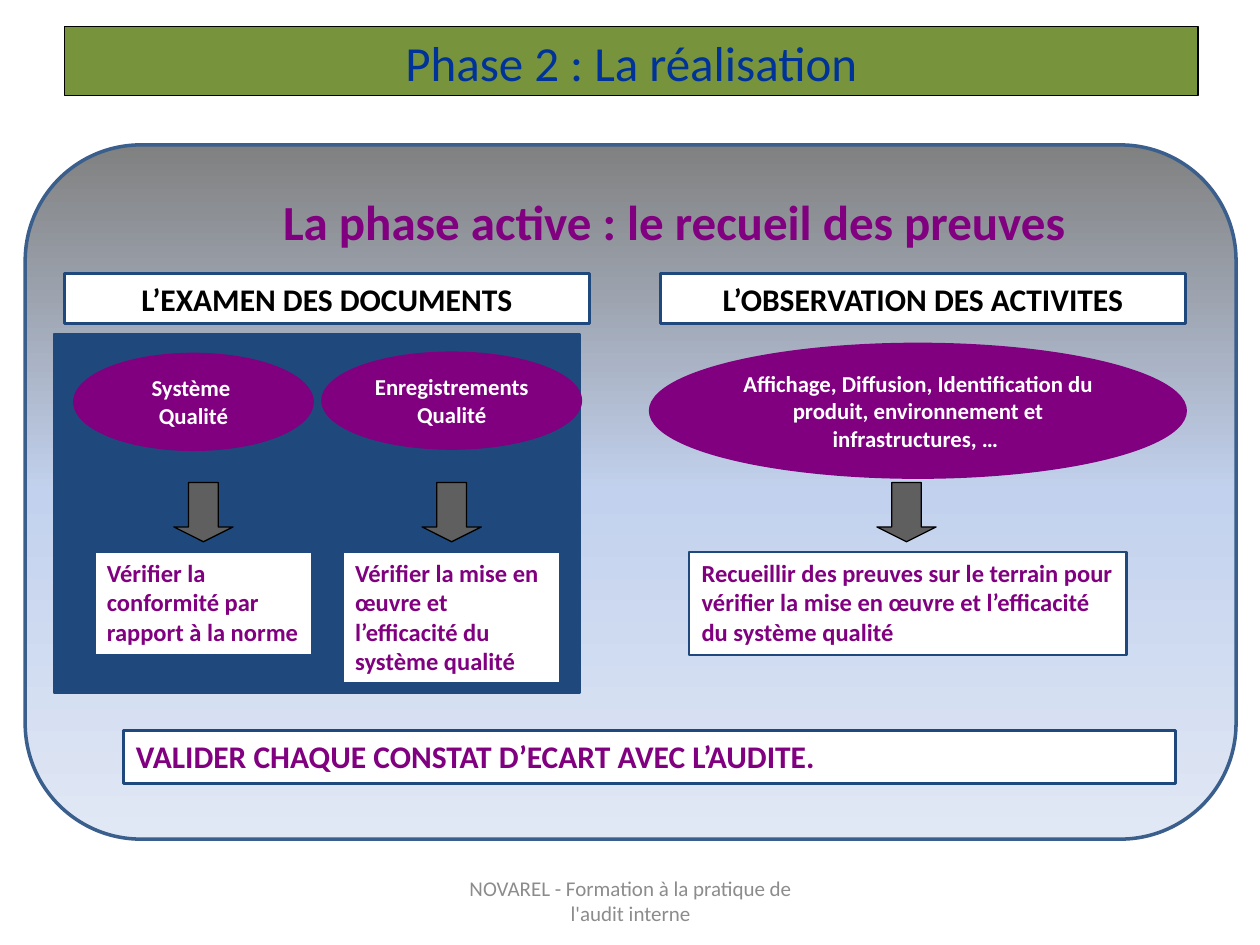
"""Build the audit slide on the evidence-gathering phase."""
from copy import deepcopy

from pptx import Presentation, util as u
from pptx.dml.color import RGBColor
from pptx.enum import shapes, text

PX = 9144
NAVY, PURPLE, WHITE, BLACK = "1F497D", "800080", "FFFFFF", "000000"
KIND = shapes.MSO_SHAPE
AL = text.PP_ALIGN
MID = text.MSO_ANCHOR.MIDDLE
GROW = text.MSO_AUTO_SIZE.SHAPE_TO_FIT_TEXT


def rgb(value):
    return RGBColor.from_string(value)


def add(box, lines=(), kind=KIND.RECTANGLE, fill=WHITE, line=NAVY, width=1.5,
        size=14, color=PURPLE, bold=True, align=AL.LEFT, spacing=None, **frame):
    at = [n * PX for n in box]
    if kind is None:
        sp = s.shapes.add_textbox(*at)
    else:
        sp = s.shapes.add_shape(kind, *at)
        sp.shadow.inherit = False
        sp.fill.solid()
        sp.fill.fore_color.rgb = rgb(fill)
        sp.line.color.rgb = rgb(line)
        sp.line.width = u.Pt(width)
    tf = sp.text_frame
    fmt = {"word_wrap": True, "vertical_anchor": text.MSO_ANCHOR.TOP} | frame
    for name, value in fmt.items():
        setattr(tf, name, value)
    for i, words in enumerate(lines):
        p = tf.paragraphs[0] if i == 0 else tf.add_paragraph()
        p.alignment, p.line_spacing = align, spacing
        r = p.add_run()
        r.text = words
        for name, value in {"name": "Calibri", "size": u.Pt(size), "bold": bold}.items():
            setattr(r.font, name, value)
        r.font.color.rgb = rgb(color)
    return sp


prs = Presentation()
prs.slide_width, prs.slide_height = 1000 * PX, 750 * PX
s = prs.slides.add_slide(prs.slide_layouts[6])

panel = add((20, 115, 961, 551), kind=KIND.ROUNDED_RECTANGLE, line="3A5F8C", width=2)
panel.fill.gradient()
panel.fill.gradient_angle = 270
first = panel.fill.gradient_stops[0]._gs
first.addnext(deepcopy(first))
stops = ((0, "808080"), (0.5, "C2D1ED"), (1, "E1E8F5"))
for stop, (position, color) in zip(panel.fill.gradient_stops, stops):
    stop.position = position
    stop.color.rgb = rgb(color)

add((342, 695, 317, 40), ["NOVAREL - Formation à la pratique de l'audit interne"],
    kind=None, size=12, color="8C8C8C", bold=False, align=AL.CENTER, vertical_anchor=MID)
add((51, 21, 900, 55), ["Phase 2 : La réalisation"], fill="77933C", line=BLACK,
    width=0.75, size=28, color="003399", bold=False, align=AL.CENTER)
add((98, 155, 874, 47), ["La phase active : le recueil des preuves"], kind=None,
    size=28, align=AL.CENTER, spacing=0.9, vertical_anchor=MID)

for x, heading in ((51, "L’EXAMEN DES DOCUMENTS"), (524, "L’OBSERVATION DES ACTIVITES")):
    add((x, 217, 417, 40), [heading], size=18, color=BLACK, align=AL.CENTER, auto_size=GROW)

add((43, 265, 417, 285))

s.shapes[-1].fill.fore_color.rgb = rgb(NAVY)

sources = (
    ((59, 281, 189, 76), ["Système ", "Qualité"]),
    ((256, 280, 205, 76), ["Enregistrements Qualité"]),
    ((516, 273, 425, 106),
     ["Affichage, Diffusion, Identification du produit, environnement et infrastructures, … "]),
)
for box, lines in sources:
    add(box, lines, kind=KIND.FLOWCHART_CONNECTOR, fill=PURPLE, line=PURPLE, size=13,
        color=WHITE, align=AL.CENTER, auto_size=GROW)

for x in (138, 335, 696):
    arrow = add((x, 383, 47, 47), kind=KIND.DOWN_ARROW, fill="5F5F5F", line=BLACK, width=0.75)
    arrow.adjustments[1] = 0.25

checks = (
    (75, 173, 82, "Vérifier la conformité par rapport à la norme"),
    (272, 173, 104, "Vérifier la mise en œuvre et l’efficacité du système qualité"),
    (547, 347, 82, "Recueillir des preuves sur le terrain pour vérifier la mise en œuvre "
                   "et l’efficacité du système qualité"),
)
for x, w, h, words in checks:
    add((x, 438, w, h), [words], auto_size=GROW)

add((98, 580, 835, 42), ["VALIDER CHAQUE CONSTAT D’ECART AVEC L’AUDITE."], size=18, auto_size=GROW)

prs.save("out.pptx")
